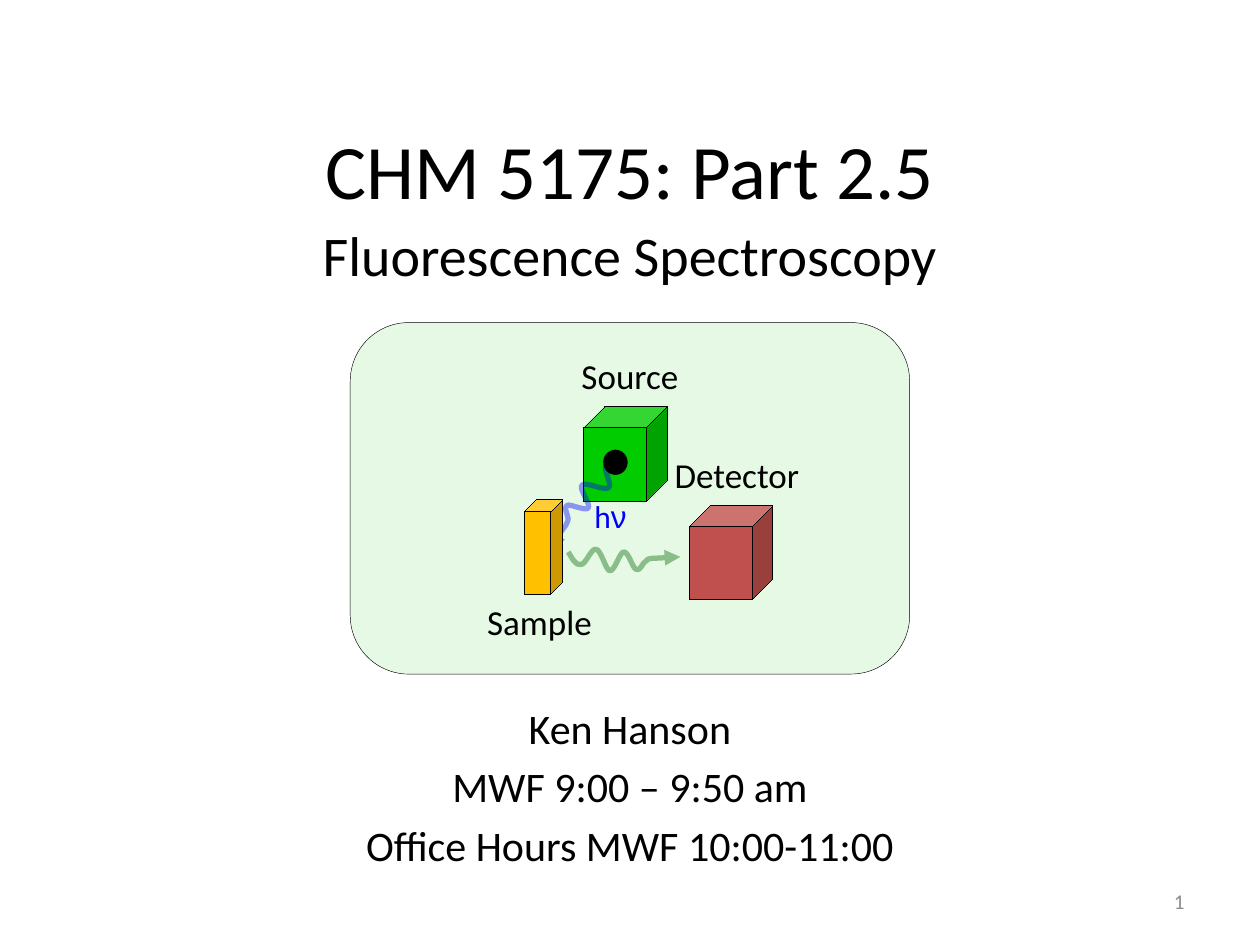
"""Build the title slide for a fluorescence spectroscopy lecture."""
from dataclasses import dataclass

import lxml.etree
import pptx
import pptx.dml.color
import pptx.enum.shapes
import pptx.enum.text
import pptx.oxml.ns
import pptx.util

Pt = pptx.util.Pt
Shape = pptx.enum.shapes.MSO_SHAPE
Align = pptx.enum.text.PP_ALIGN
Anchor = pptx.enum.text.MSO_ANCHOR
qn = pptx.oxml.ns.qn
Point = tuple[float, float]
HAIRLINE = 0.01


@dataclass
class Label:
    """A text box, with one or more paragraphs of one style."""
    left: float
    top: float
    width: float
    height: float
    lines: list[str]
    size: float
    color: str = "000000"
    align: Align = Align.CENTER
    anchor: Anchor = Anchor.TOP
    space_before: float = 0


@dataclass
class Solid:
    """A filled preset shape of the instrument diagram."""
    kind: Shape
    left: float
    top: float
    width: float
    height: float
    fill: str
    line_width: float | None = HAIRLINE
    opacity: int = 100
    adjustment: float | None = None


@dataclass
class Wave:
    """A wavy light ray: its tip, then three points for each Bézier segment."""
    color: str
    tip: Point
    points: list[Point]


PANEL = Solid(Shape.ROUNDED_RECTANGLE, 200.16, 184.32, 319.68, 200.88, "00CC00", 0.25, 10)
SOURCE = Solid(Shape.CUBE, 333.7, 232.4, 47.5, 54, "00CC00")
DETECTOR = Solid(Shape.CUBE, 394.2, 288.7, 47.5, 54, "C0504D")
APERTURE = Solid(Shape.OVAL, 344.7, 257, 14, 14.4, "000000", None)
SAMPLE = Solid(Shape.CUBE, 299.5, 285.6, 21.8, 54, "FFC000", adjustment=0.316)

EXCITATION = Wave("0000FF", (313.9, 313.2), [
    (313.9, 313.2), (321.1, 303.1), (323.3, 300.2),
    (324.7, 297.4), (324, 298.8), (324.7, 296.6),
    (324.7, 294.5), (321.8, 290.2), (324, 288.7),
    (326.2, 288), (334.8, 292.3), (336.2, 290.2),
    (337.7, 288), (330.5, 279.4), (332.6, 277.2),
    (334.8, 275), (345.6, 280.8), (347.8, 278.6),
    (349.9, 277.2), (344.9, 268.6), (346.3, 266.4),
    (347.8, 264.2), (352.1, 264.2), (356.4, 265)])
EMISSION = Wave("006600", (388.8, 318.2), [
    (388.8, 318.2), (375.8, 319), (373, 319),
    (369.4, 319.7), (370.8, 319), (369.4, 320.4),
    (367.2, 321.1), (365.8, 326.9), (363.6, 325.4),
    (361.4, 324.7), (359.3, 315.4), (356.4, 315.4),
    (354.2, 315.4), (351.4, 326.2), (348.5, 326.2),
    (346.3, 326.2), (343.4, 313.9), (340.6, 313.9),
    (337.7, 313.2), (334.8, 322.6), (331.9, 322.6),
    (329, 323.3), (326.9, 319), (324.7, 315.4)])

DIAGRAM_LABELS = [
    Label(319.7, 199, 80.6, 31.7, ["Source"], 20),
    Label(260.8, 339.8, 95, 31.7, ["Sample"], 20),
    Label(366, 255.6, 110.2, 31.7, ["Detector"], 20),
]
PHOTON_LABEL = Label(332.6, 280.5, 36, 28.8, ["h"], 18, "0000FF", Align.LEFT)
PAGE_LABELS = [
    Label(516.24, 500.4, 167.76, 28.8, ["1"], 12, "8C8C8C", Align.RIGHT, Anchor.MIDDLE),
    Label(108, 397.7, 504, 101.52,
          ["Ken Hanson", "MWF 9:00 – 9:50 am", "Office Hours MWF 10:00-11:00"],
          24, space_before=4.8),
    Label(54, 38.16, 612, 115.92, ["CHM 5175: Part 2.5"], 44, anchor=Anchor.MIDDLE),
    Label(108, 122.4, 504, 93.6, ["Fluorescence Spectroscopy"], 32, space_before=6.4),
]


def paint(fill, color: str, opacity: int = 100) -> None:
    """Make a fill solid, with a hex colour and an opacity in percent."""
    fill.solid()
    fill.fore_color.rgb = pptx.dml.color.RGBColor.from_string(color)
    if opacity < 100:
        value = fill._xPr.find(".//" + qn("a:srgbClr"))
        lxml.etree.SubElement(value, qn("a:alpha"), val=str(opacity * 1000))


def add_label(page, label: Label):
    """Add a text box and return it."""
    box = page.shapes.add_textbox(
        Pt(label.left), Pt(label.top), Pt(label.width), Pt(label.height))
    frame = box.text_frame
    frame.word_wrap = True
    frame.vertical_anchor = label.anchor
    frame.text = "\n".join(label.lines)
    for para in frame.paragraphs:
        para.alignment = label.align
        para.space_before = Pt(label.space_before)
        para.font.name = "Calibri"
        para.font.size = Pt(label.size)
        paint(para.font.fill, label.color)
    return box


def add_solid(page, solid: Solid) -> None:
    """Add a preset shape with a black outline or none."""
    shape = page.shapes.add_shape(
        solid.kind, Pt(solid.left), Pt(solid.top), Pt(solid.width), Pt(solid.height))
    shape.shadow.inherit = False
    paint(shape.fill, solid.fill, solid.opacity)
    if solid.adjustment is not None:
        shape.adjustments[0] = solid.adjustment
    if solid.line_width is None:
        shape.line.fill.background()
    else:
        paint(shape.line.fill, "000000")
        shape.line.width = Pt(solid.line_width)


def add_wave(page, wave: Wave) -> None:
    """Add an open Bézier curve with an arrowhead at its tip."""
    builder = page.shapes.build_freeform(*map(Pt, wave.tip))
    builder.add_line_segments([(Pt(x), Pt(y)) for x, y in wave.points], close=False)
    shape = builder.convert_to_shape()
    shape.shadow.inherit = False
    shape.fill.background()
    paint(shape.line.fill, wave.color, 40)
    shape.line.width = Pt(3)
    lxml.etree.SubElement(shape.line._get_or_add_ln(), qn("a:headEnd"), type="triangle")
    segments = list(shape._element.iter(qn("a:lnTo")))
    outline = segments[0].getparent()
    for first in range(0, len(segments), 3):
        curve = lxml.etree.SubElement(outline, qn("a:cubicBezTo"))
        for segment in segments[first:first + 3]:
            curve.append(segment[0])
            outline.remove(segment)


def main() -> None:
    """Draw the slide and save it."""
    deck = pptx.Presentation()
    deck.slide_width, deck.slide_height = Pt(720), Pt(540)
    page = deck.slides.add_slide(deck.slide_layouts[6])
    add_solid(page, PANEL)
    add_solid(page, SOURCE)
    for label in DIAGRAM_LABELS:
        add_label(page, label)
    photon = add_label(page, PHOTON_LABEL)
    span = photon.text_frame.paragraphs[0].add_run()
    span.text = "ν"
    span.font.name = "Arial"
    add_solid(page, DETECTOR)
    add_wave(page, EXCITATION)
    add_wave(page, EMISSION)
    add_solid(page, APERTURE)
    add_solid(page, SAMPLE)
    for label in PAGE_LABELS:
        add_label(page, label)
    deck.save("out.pptx")


if __name__ == "__main__":
    main()
